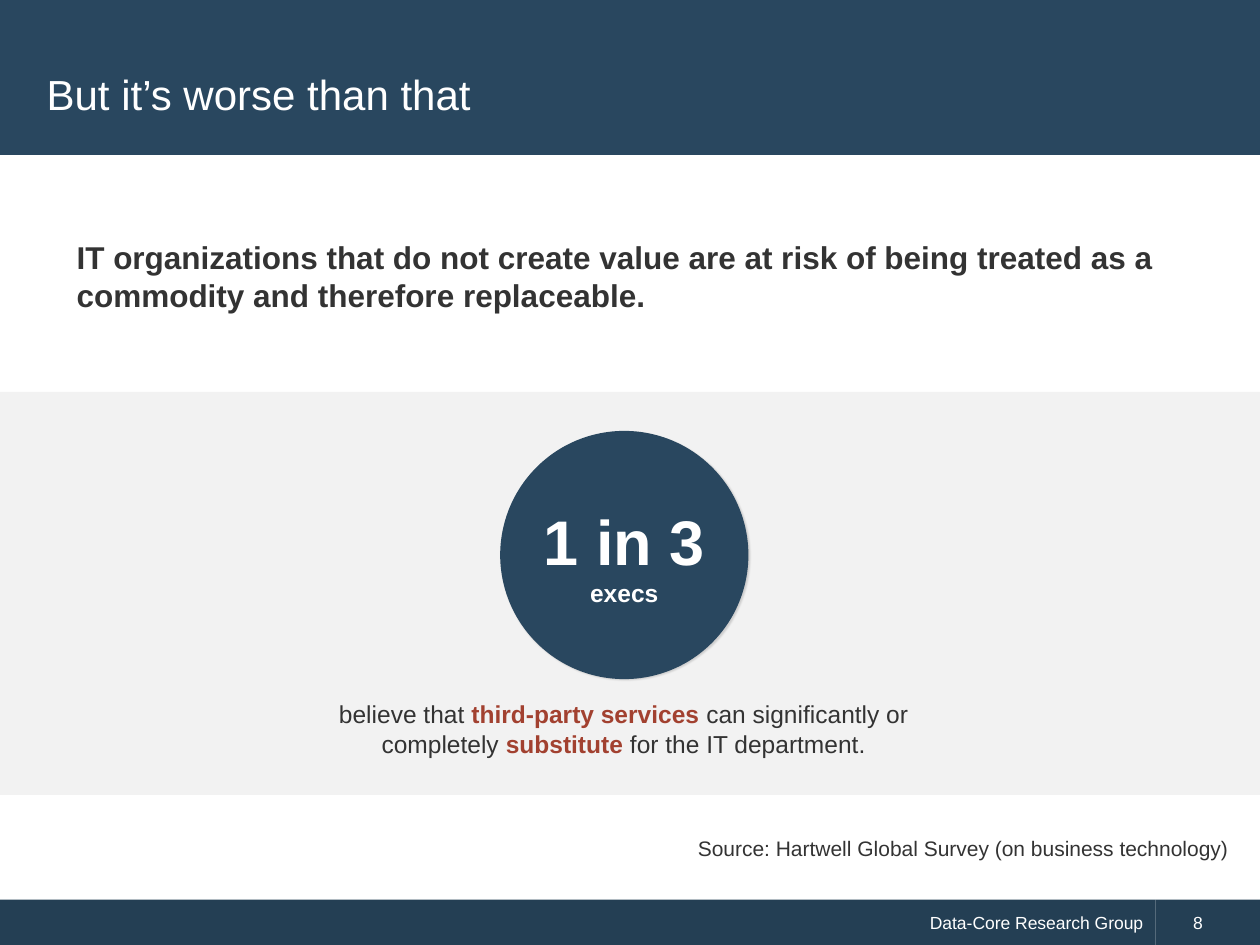
from lxml import etree
from pptx import Presentation
from pptx.enum.shapes import MSO_SHAPE as Shape
from pptx.enum.text import MSO_ANCHOR as Anchor, PP_ALIGN as Align
from pptx.dml.color import RGBColor
from pptx.oxml.ns import qn
from pptx.util import Inches, Pt

COLORS = {"navy": "29475F", "footer": "243F54", "panel": "F2F2F2",
          "text": "333333", "accent": "A24130", "white": "FFFFFF"}
FONT = "Arial"

TITLE = "But it’s worse than that"
MESSAGE = ("IT organizations that do not create value are at risk of being "
           "treated as a commodity and therefore replaceable.")
STATISTIC = [("1 in 3", 36), ("execs", 14)]
# (text, emphasized)
FINDING = [("believe that ", False), ("third-party services", True),
           (" can significantly or completely ", False), ("substitute", True),
           (" for the IT department.", False)]
SOURCE = "Source: Hartwell Global Survey (on business technology)"
FOOTER = "Data-Core Research Group"
PAGE_NUMBER = "8"

SLIDE_WIDTH = 10
FOOTER_TOP, FOOTER_HEIGHT, NUMBER_LEFT = 7.14, 0.36, 9.17


def color(name):
    return RGBColor.from_string(COLORS[name])


def style(font, size, color_name, bold=False):
    font.name, font.size, font.bold = FONT, Pt(size), bold
    font.color.rgb = color(color_name)


def add_filled(slide, kind, box, fill):
    shape = slide.shapes.add_shape(kind, *map(Inches, box))
    shape.shadow.inherit = False
    shape.fill.solid()
    shape.fill.fore_color.rgb = color(fill)
    shape.line.fill.background()
    return shape


def write(shape, text, size, color_name, bold=False, align=Align.LEFT):
    paragraph = shape.text_frame.paragraphs[0]
    paragraph.text = text
    paragraph.alignment = align
    style(paragraph.font, size, color_name, bold)


def add_text_box(slide, box, wrap=True):
    text_box = slide.shapes.add_textbox(*map(Inches, box))
    text_box.text_frame.word_wrap = wrap
    return text_box


def add_soft_shadow(shape):
    effects = shape._element.spPr.find(qn("a:effectLst"))
    shadow = etree.SubElement(effects, qn("a:outerShdw"), blurRad=str(Pt(1)),
                              dist=str(Pt(1)), dir=str(45 * 60000))
    black = etree.SubElement(shadow, qn("a:srgbClr"), val="000000")
    etree.SubElement(black, qn("a:alpha"), val="15000")


def add_header(slide):
    band = add_filled(slide, Shape.RECTANGLE, (0, 0, SLIDE_WIDTH, 1.23), "navy")
    title = slide.shapes.title
    title._element.addprevious(band._element)  # keep the band behind the title
    title.left, title.top, title.width, title.height = map(
        Inches, (0.27, 0.38, 9.72, 0.73))
    title.text_frame.vertical_anchor = Anchor.MIDDLE
    write(title, TITLE, 24, "white")


def add_footer(slide):
    name_bar = add_filled(slide, Shape.RECTANGLE,
                          (0, FOOTER_TOP, NUMBER_LEFT, FOOTER_HEIGHT), "footer")
    write(name_bar, FOOTER, 10, "white", align=Align.RIGHT)
    number_bar = add_filled(
        slide, Shape.RECTANGLE,
        (NUMBER_LEFT, FOOTER_TOP, SLIDE_WIDTH - NUMBER_LEFT, FOOTER_HEIGHT), "footer")
    number_bar.text_frame.margin_left = Inches(0.3)
    write(number_bar, PAGE_NUMBER, 10, "white")


def add_statistic(slide):
    add_filled(slide, Shape.RECTANGLE, (0, 3.11, SLIDE_WIDTH, 3.2), "panel")
    circle = add_filled(slide, Shape.OVAL, (3.97, 3.42, 1.97, 1.97), "navy")
    add_soft_shadow(circle)
    frame = circle.text_frame
    frame.margin_left = frame.margin_right = frame.margin_top = frame.margin_bottom = 0
    frame.text = "\n".join(text for text, _ in STATISTIC)
    for paragraph, (_, size) in zip(frame.paragraphs, STATISTIC):
        paragraph.alignment = Align.CENTER
        style(paragraph.font, size, "white", bold=True)

    finding = add_text_box(slide, (2.57, 5.5, 4.76, 0.82))
    paragraph = finding.text_frame.paragraphs[0]
    paragraph.alignment = Align.CENTER
    paragraph.space_after = Pt(6)
    for text, emphasized in FINDING:
        run = paragraph.add_run()
        run.text = text
        style(run.font, 14, "accent" if emphasized else "text", emphasized)


def main():
    presentation = Presentation()
    presentation.slide_width = Inches(SLIDE_WIDTH)
    presentation.slide_height = Inches(7.5)
    slide = presentation.slides.add_slide(presentation.slide_layouts[5])
    add_header(slide)
    add_footer(slide)
    add_statistic(slide)
    write(add_text_box(slide, (0.51, 1.84, 8.97, 0.71)), MESSAGE, 18, "text", bold=True)
    write(add_text_box(slide, (5.44, 6.58, 4.56, 0.3), wrap=False), SOURCE, 12, "text")
    presentation.save("out.pptx")


if __name__ == "__main__":
    main()
